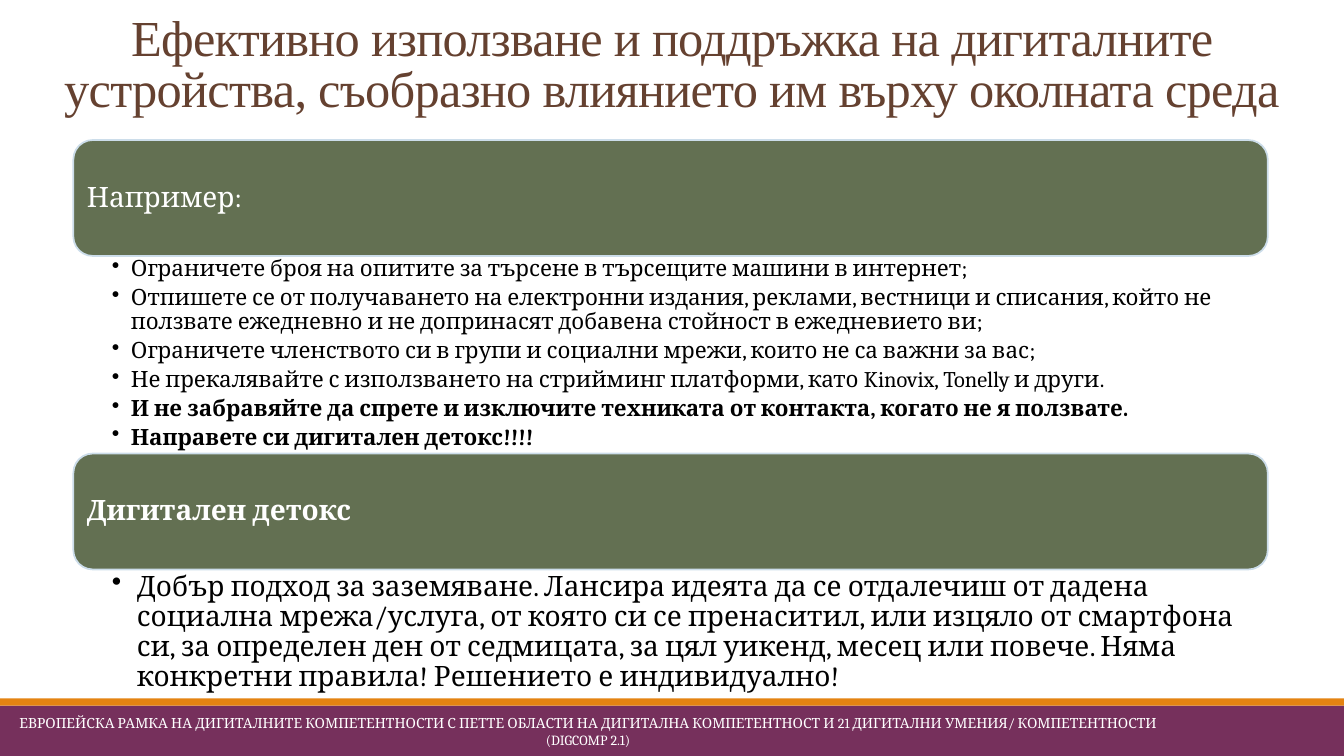
"""Build a slide on using digital devices with care for the environment."""
from lxml import etree
from pptx import Presentation, util as u
from pptx.dml.color import RGBColor
from pptx.enum import shapes, text
from pptx.oxml.ns import qn

Cm = u.Cm
MID, LEFT, CENTER = text.MSO_ANCHOR.MIDDLE, text.PP_ALIGN.LEFT, text.PP_ALIGN.CENTER


def paint(part, tone):
    part.fill.solid()
    part.fill.fore_color.rgb = RGBColor.from_string(tone)


def write(shape, lines, size, tone, face="Cambria", align=LEFT, anchor=MID,
          pad=(0.1, 0.1, 0.1, 0.1), lead=1.0, after=0, dent=0):
    frame = shape.text_frame
    frame.word_wrap = True
    frame.vertical_anchor = anchor
    frame.margin_left, frame.margin_top, frame.margin_right, frame.margin_bottom = map(Cm, pad)
    for i, (words, bold) in enumerate(lines):
        para = frame.paragraphs[0] if i == 0 else frame.add_paragraph()
        para.add_run().text = words
        para.alignment, para.line_spacing, para.space_after = align, lead, u.Pt(after)
        font = para.font
        font.size, font.name, font.bold = u.Pt(size), face, bold
        font.color.rgb = RGBColor.from_string(tone)
        if dent:
            para.level = 1
            props = para._p.get_or_add_pPr()
            props.set("marL", str(Cm(dent)))
            props.set("indent", str(-Cm(dent)))
            mark = etree.Element(qn("a:buChar"), char="•")
            props.find(qn("a:defRPr")).addprevious(mark)


deck = Presentation()
deck.slide_width, deck.slide_height = Cm(33.87), Cm(19.05)
slide = deck.slides.add_slide(deck.slide_layouts[6])
items = slide.shapes

for top, high, tone in [(17.78, 1.27, "76305C"), (17.6, 0.18, "E48312")]:
    band = items.add_shape(shapes.MSO_SHAPE.RECTANGLE, 0, Cm(top), deck.slide_width, Cm(high))
    band.shadow.inherit = False
    paint(band, tone)
    band.line.fill.background()

title = items.add_textbox(0, 0, deck.slide_width, Cm(3.1))
write(title, [("Ефективно използване и поддръжка на дигиталните устройства, "
               "съобразно влиянието им върху околната среда", False)],
      36, "654130", "Times New Roman", CENTER, text.MSO_ANCHOR.BOTTOM,
      (0.25, 0.13, 0.25, 0.13), 0.85)
title.text_frame.paragraphs[0].runs[0]._r.get_or_add_rPr().set("spc", "-50")

foot = items.add_textbox(0, Cm(17.93), Cm(29.64), Cm(1.02))
write(foot, [("ЕВРОПЕЙСКА РАМКА НА ДИГИТАЛНИТЕ КОМПЕТЕНТНОСТИ С ПЕТТЕ ОБЛАСТИ НА "
              "ДИГИТАЛНА КОМПЕТЕНТНОСТ И 21 ДИГИТАЛНИ УМЕНИЯ/ КОМПЕТЕНТНОСТИ "
              "(DIGCOMP 2.1)", False)], 10, "FFFFFF", align=CENTER)

tips = [
    ("Ограничете броя на опитите за търсене в търсещите машини в интернет;", False),
    ("Отпишете се от получаването на електронни издания, реклами, вестници и списания, "
     "който не ползвате ежедневно и не допринасят добавена стойност в ежедневието ви;", False),
    ("Ограничете членството си в групи и социални мрежи, които не са важни за вас;", False),
    ("Не прекалявайте с използването на стрийминг платформи, като Kinovix, Tonelly и други.",
     False),
    ("И не забравяйте да спрете и изключите техниката от контакта, когато не я ползвате.", True),
    ("Направете си дигитален детокс!!!!", True),
]
detox = [
    ("Добър подход за заземяване. Лансира идеята да се отдалечиш от дадена социална "
     "мрежа/услуга, от която си се пренаситил, или изцяло от смартфона си, за определен ден "
     "от седмицата, за цял уикенд, месец или повече. Няма конкретни правила! "
     "Решението е индивидуално!", False),
]
parts = [
    (3.53, "Например:", False, tips, 4.98, 16, 3.4, 0.48, (0.97, 0.05, 0.3, 0.05)),
    (11.43, "Дигитален детокс", True, detox, 3.15, 20, 4, 0.63, (0.97, 0.08, 0.41, 0.08)),
]
for top, head, bold, lines, high, size, after, dent, pad in parts:
    bar = items.add_shape(shapes.MSO_SHAPE.ROUNDED_RECTANGLE,
                          Cm(1.85), Cm(top), Cm(30.1), Cm(2.92))
    bar.shadow.inherit = False
    paint(bar, "637052")
    paint(bar.line, "CCDDEA")
    bar.line.width = u.Pt(1.25)
    write(bar, [(head, bold)], 20, "FFFFFF", pad=(0.2, 0.2, 0.2, 0.2), lead=0.9)
    body = items.add_textbox(Cm(1.85), Cm(top + 2.9), Cm(30.1), Cm(high))
    write(body, lines, size, "000000", anchor=text.MSO_ANCHOR.TOP, pad=pad,
          lead=0.9, after=after, dent=dent)

deck.save("out.pptx")
